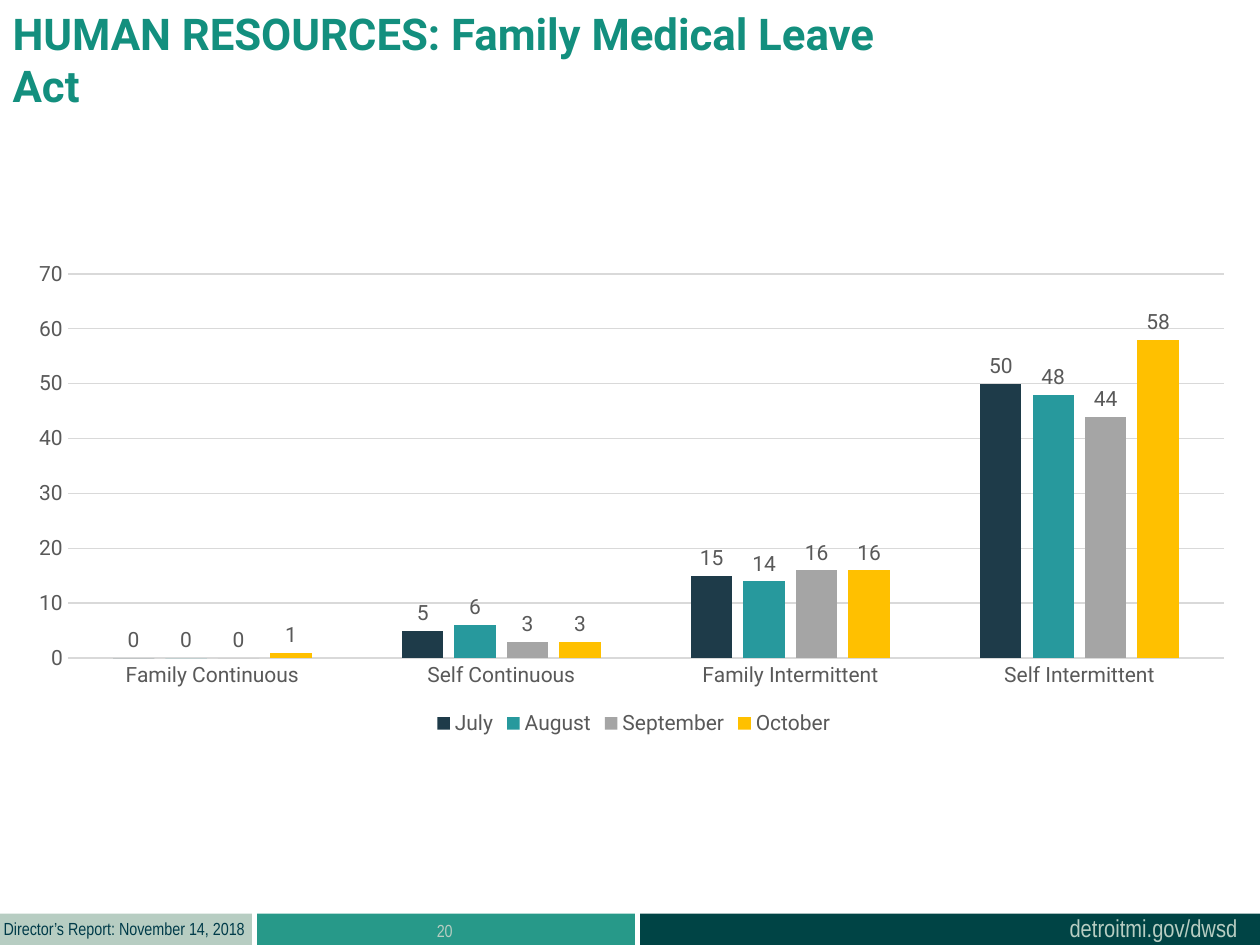
from pptx import Presentation
from pptx.chart.data import CategoryChartData
from pptx.dml.color import RGBColor
from pptx.enum.chart import XL_CHART_TYPE, XL_LABEL_POSITION, XL_LEGEND_POSITION, XL_TICK_MARK
from pptx.enum.shapes import MSO_SHAPE
from pptx.enum.text import MSO_ANCHOR, MSO_AUTO_SIZE, PP_ALIGN
from pptx.oxml import parse_xml
from pptx.oxml.ns import nsdecls
from pptx.util import Inches, Pt

COLORS = {
    "title": "138F7E", "teal": "279989", "dark": "004445", "sage": "B7CDC2",
    "navy": "003B49", "gray": "595959", "grid": "D9D9D9",
    "July": "1E3B49", "August": "27999D", "September": "A5A5A5", "October": "FFC000",
}


class Deck:
    def __init__(self):
        self.show = Presentation()
        self.show.slide_width, self.show.slide_height = Inches(10), Inches(7.5)
        self.slide = self.show.slides.add_slide(self.show.slide_layouts[5])

    def color(self, name):
        return RGBColor.from_string(COLORS[name])

    def style(self, font, size, color, face="Roboto", bold=False):
        font.name, font.size, font.bold = face, Pt(size), bold
        font.color.rgb = self.color(color)

    def line(self, part):
        part.format.line.color.rgb = self.color("grid")
        part.format.line.width = Pt(0.75)

    def title(self, text, box):
        shape = self.slide.shapes.title
        shape.left, shape.top, shape.width, shape.height = map(Inches, box)
        frame = shape.text_frame
        frame.text = text
        frame.word_wrap = True
        frame.auto_size = MSO_AUTO_SIZE.NONE
        frame.vertical_anchor = MSO_ANCHOR.TOP
        para = frame.paragraphs[0]
        para.alignment = PP_ALIGN.LEFT
        self.style(para.font, 25, "title", bold=True)

    def bar(self, color, left, width):
        shape = self.slide.shapes.add_shape(
            MSO_SHAPE.RECTANGLE, *map(Inches, (left, 7.25, width, 0.25)))
        shape.shadow.inherit = False
        shape.fill.solid()
        shape.fill.fore_color.rgb = self.color(color)
        shape.line.fill.background()

    def text(self, text, box, size, color, align=PP_ALIGN.LEFT, wrap=False):
        frame = self.slide.shapes.add_textbox(*map(Inches, box)).text_frame
        frame.word_wrap = wrap
        frame.text = text
        para = frame.paragraphs[0]
        para.alignment = align
        self.style(para.font, size, color, "Arial Narrow")

    def chart(self, groups, series, box, plot):
        data = CategoryChartData()
        data.categories = groups
        for name, values in series.items():
            data.add_series(name, values)
        chart = self.slide.shapes.add_chart(
            XL_CHART_TYPE.COLUMN_CLUSTERED, *map(Inches, box), data).chart
        chart.has_title = False
        self.style(chart.font, 12, "gray")

        chart.has_legend = True
        chart.legend.position = XL_LEGEND_POSITION.BOTTOM
        chart.legend.include_in_layout = False
        self.style(chart.legend.font, 12, "gray")

        for axis in (chart.category_axis, chart.value_axis):
            axis.major_tick_mark = axis.minor_tick_mark = XL_TICK_MARK.NONE
            self.style(axis.tick_labels.font, 12, "gray")
        self.line(chart.category_axis)
        scale = chart.value_axis
        scale.minimum_scale, scale.maximum_scale, scale.major_unit = 0, 70, 10
        scale.format.line.fill.background()
        self.line(scale.major_gridlines)

        cols = chart.plots[0]
        cols.gap_width, cols.overlap = 219, -27
        cols.vary_by_categories = False
        for item in cols.series:
            item.format.fill.solid()
            item.format.fill.fore_color.rgb = self.color(item.name)
            item.invert_if_negative = False
            labels = item.data_labels
            labels.show_value = True
            labels.position = XL_LABEL_POSITION.OUTSIDE_END
            self.style(labels.font, 12, "gray")
        self.place(chart, plot)

    def place(self, chart, plot):
        modes = "".join(f'<c:{key}Mode val="edge"/>' for key in "xy")
        sizes = "".join(f'<c:{key} val="{val}"/>' for key, val in zip("xywh", plot))
        area = chart.element.chart.plotArea
        for old in area.findall("{*}layout"):
            area.remove(old)
        area.insert(0, parse_xml(
            f'<c:layout {nsdecls("c")}><c:manualLayout><c:layoutTarget val="inner"/>'
            f'{modes}{sizes}</c:manualLayout></c:layout>'))


def main():
    deck = Deck()
    for color, left, width in (("teal", 2.04, 3), ("dark", 5.08, 4.92), ("sage", 0, 2)):
        deck.bar(color, left, width)
    deck.text("detroitmi.gov/dwsd", (8.39, 7.2, 1.55, 0.34), 14, "sage")
    deck.text("Director’s Report: November 14, 2018", (-0.07, 7.24, 2.19, 0.27), 10, "navy")
    deck.text("20", (2.03, 7.25, 3, 0.4), 10, "sage", PP_ALIGN.CENTER, True)
    deck.title("HUMAN RESOURCES: Family Medical Leave Act", (0, 0, 7.59, 0.77))
    deck.chart(
        ["Family Continuous", "Self Continuous", "Family Intermittent", "Self Intermittent"],
        {
            "July": (0, 5, 15, 50),
            "August": (0, 6, 14, 48),
            "September": (0, 3, 16, 44),
            "October": (1, 3, 16, 58),
        },
        (0.2, 2.02, 9.66, 3.86), (0.035, 0.04, 0.95, 0.79))
    deck.show.save("out.pptx")


if __name__ == "__main__":
    main()
